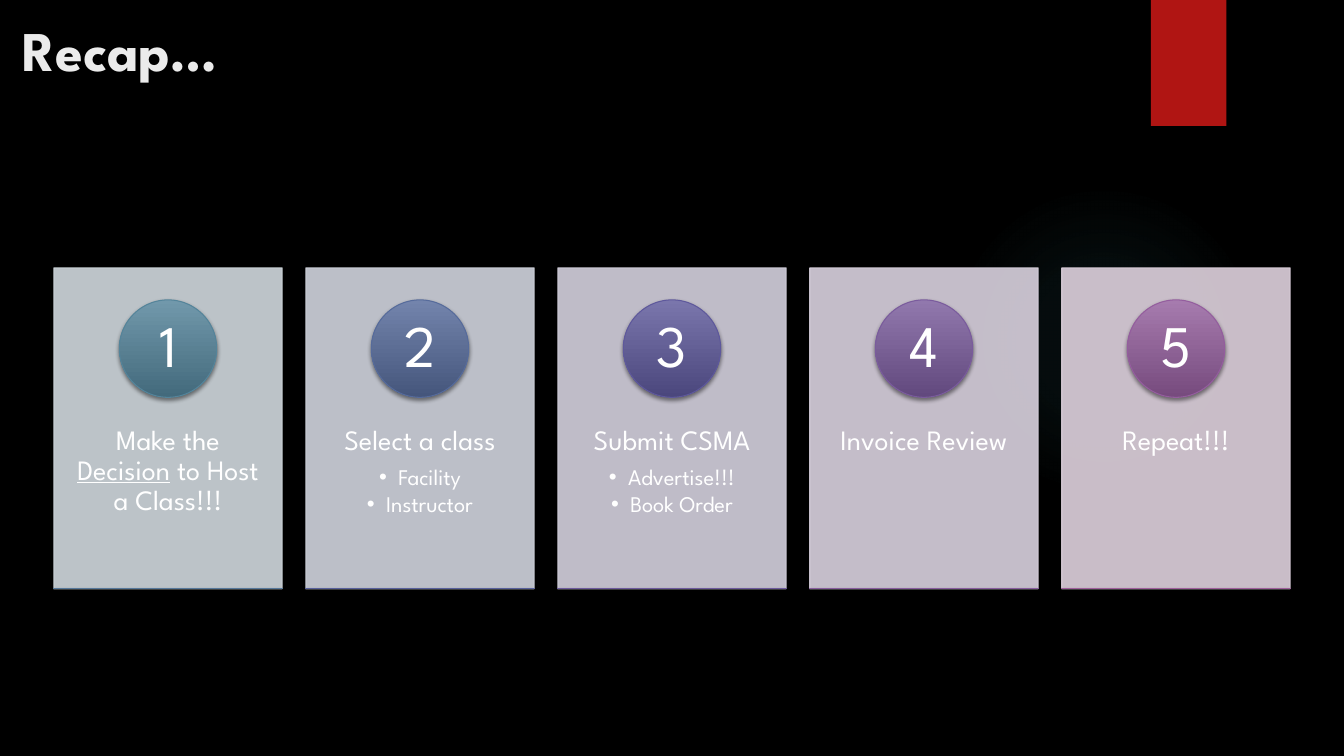
from lxml import etree
from pptx import Presentation
from pptx import util as u
from pptx.dml.color import RGBColor
from pptx.enum import shapes, text
from pptx.oxml.ns import qn

COLS, ROWS = 160, 90
CELL = u.Inches(1) // 12
FONT = "League Spartan"
HUES = {"back": "000000", "white": "FFFFFF", "title": "EBEBEB",
        "red": "B01513", "glow": "50B9C1"}
RECT, OVAL = shapes.MSO_SHAPE.RECTANGLE, shapes.MSO_SHAPE.OVAL
TOP, MID = text.MSO_ANCHOR.TOP, text.MSO_ANCHOR.MIDDLE
PITCH, LEFT, WIDTH = 30, 6.4, 27.2

# label ("_" toggles underline), bullets, card, disc (top, foot, line), base (top, foot, line)
STEPS = [
    ("Make the _Decision_ to Host a Class!!!", [], "D1D9DE",
     ("7198AB", "436A7C", "54849A"), ("728EAC", "44607C", "55779A")),
    ("Select a class", ["Facility", "Instructor"], "D1D4DE",
     ("7384AC", "45567C", "566B9B"), ("757AAC", "464C7D", "575F9B")),
    ("Submit CSMA", ["Advertise!!!", "Book Order"], "D4D1DE",
     ("7A76AC", "4B477D", "5E589C"), ("8677AD", "57487D", "6C599C")),
    ("Invoice Review", [], "DAD2DF",
     ("9178AD", "62497E", "7A5B9D"), ("9C79AE", "6C4A7E", "875C9D")),
    ("Repeat!!!", [], "DFD2DE",
     ("A67BAE", "774B7E", "945D9E"), ("AF7CAC", "7F4B7C", "9E5E9B")),
]


def put(item, **vals):
    for key, val in vals.items():
        setattr(item, key, val)


def node(parent, tag, **atts):
    return etree.SubElement(parent, qn("a:" + tag),
                            {key: str(val) for key, val in atts.items()})


def tint(parent, hue, share=100):
    """Add a colour with its opacity in percent."""
    clr = node(parent, "srgbClr", val=hue)
    if share < 100:
        node(clr, "alpha", val=share * 1000)


class Deck:
    def __init__(self):
        self.prs = Presentation()
        put(self.prs, slide_width=COLS * CELL, slide_height=ROWS * CELL)
        self.slide = self.prs.slides.add_slide(self.prs.slide_layouts[3])
        fill = self.slide.background.fill
        fill.solid()
        fill.fore_color.rgb = RGBColor.from_string(HUES["back"])

    def box(self, *cells):
        return [round(c * CELL) for c in cells]

    def shape(self, kind, cells, line=None, shade=False):
        item = self.slide.shapes.add_shape(kind, *self.box(*cells))
        item.shadow.inherit = False
        item.line.fill.background()
        if line:
            item.line.width = u.Pt(0.75)
            item.line.color.rgb = RGBColor.from_string(line)
        if shade:
            cast = node(item._element.spPr.find(qn("a:effectLst")), "outerShdw",
                        blurRad=u.Pt(3), dist=u.Pt(2), dir=5400000, rotWithShape=0)
            tint(cast, HUES["back"], 45)
        return item

    def flat(self, item, hue, share=100):
        item.fill.solid()
        item.fill.fore_color.rgb = RGBColor.from_string(hue)
        if share < 100:
            for clr in item._element.spPr.iter(qn("a:srgbClr")):
                node(clr, "alpha", val=share * 1000)

    def fade(self, item, stops, ring=False):
        """Fill with (position, hue, opacity) stops, downward or from the centre."""
        item.fill.background()
        props = item._element.spPr
        grad = etree.Element(qn("a:gradFill"), rotWithShape="1")
        props.replace(props.find(qn("a:noFill")), grad)
        marks = node(grad, "gsLst")
        for pos, hue, share in stops:
            tint(node(marks, "gs", pos=pos * 1000), hue, share)
        if ring:
            node(node(grad, "path", path="circle"), "fillToRect",
                 l=50000, t=50000, r=50000, b=50000)
        else:
            node(grad, "lin", ang=5400000, scaled=0)

    def frame(self, item, anchor, side, edge):
        side, edge = self.box(side, edge)
        put(item.text_frame, word_wrap=True, auto_size=text.MSO_AUTO_SIZE.NONE,
            vertical_anchor=anchor, margin_left=side, margin_right=side,
            margin_top=edge, margin_bottom=edge)
        return item.text_frame

    def hold(self, item, cells):
        """Move a placeholder to its cells, in front of what is drawn so far."""
        left, top, width, height = self.box(*cells)
        put(item, left=left, top=top, width=width, height=height)
        self.slide.shapes._spTree.append(item._element)
        return item

    def ink(self, para, words, size, hue="white", bold=False,
            align=text.PP_ALIGN.CENTER, after=0, bullet=False):
        """Set the words of a paragraph and its look."""
        put(para, alignment=align, line_spacing=0.9, space_before=u.Pt(0),
            space_after=u.Pt(after), level=int(bullet))
        props = para._p.get_or_add_pPr()
        dent = u.Inches(0.19) if bullet else 0
        props.set("marL", str(dent))
        props.set("indent", str(-dent))
        if bullet:
            node(props, "buChar", char="•")
        else:
            node(props, "buNone")
        for i, part in enumerate(words.split("_")):
            run = para.add_run()
            run.text = part
            put(run.font, name=FONT, size=u.Pt(size), bold=bold, underline=i % 2 == 1)
            run.font.color.rgb = RGBColor.from_string(HUES[hue])

    def title(self, words, cells):
        item = self.hold(self.slide.shapes.title, cells)
        para = self.frame(item, TOP, 1.2, 0.6).paragraphs[0]
        self.ink(para, words, 40, "title", True, text.PP_ALIGN.LEFT)
        para.line_spacing = 1.0

    def label(self, words, items, cells, holder=None):
        if holder is None:
            item = self.slide.shapes.add_textbox(*self.box(*cells))
        else:
            item = self.hold(holder, cells)
        body = self.frame(item, TOP, 2.13, 4.3)
        self.ink(body.paragraphs[0], words, 20, after=7)
        for entry in items:
            self.ink(body.add_paragraph(), entry, 16, after=2.4, bullet=True)

    def blend(self, kind, cells, hues):
        head, foot, line = hues
        item = self.shape(kind, cells, line, shade=True)
        self.fade(item, [(0, head, 100), (100, foot, 100)])
        return item

    def card(self, num, step, holder):
        words, items, hue, disc, base = step
        left = LEFT + (num - 1) * PITCH
        self.flat(self.shape(RECT, (left, 31.9, WIDTH, 38.2), hue), hue, 90)
        self.label(words, items, (left, 46.4, WIDTH, 22.9), holder)
        size = 11.6
        spot = self.blend(OVAL, (left + (WIDTH - size) / 2, 35.7, size, size), disc)
        self.ink(self.frame(spot, MID, 0, 0.1).paragraphs[0], str(num), 42)
        self.blend(RECT, (left, 70.1, WIDTH, 0), base)


def main():
    deck = Deck()
    glow = deck.shape(OVAL, (112.9, 22, 37, 37))
    deck.fade(glow, [(0, HUES["glow"], 7), (36, HUES["glow"], 6),
                     (69, HUES["glow"], 0)], ring=True)
    deck.flat(deck.shape(RECT, (137, 0, 9, 15), shade=True), HUES["red"])
    deck.title("Recap…", (1.5, 1.3, 43.2, 15.1))
    lists = iter([p for p in deck.slide.placeholders if p.placeholder_format.idx])
    for num, step in enumerate(STEPS, 1):
        deck.card(num, step, next(lists) if step[1] else None)
    deck.prs.save("out.pptx")


if __name__ == "__main__":
    main()
